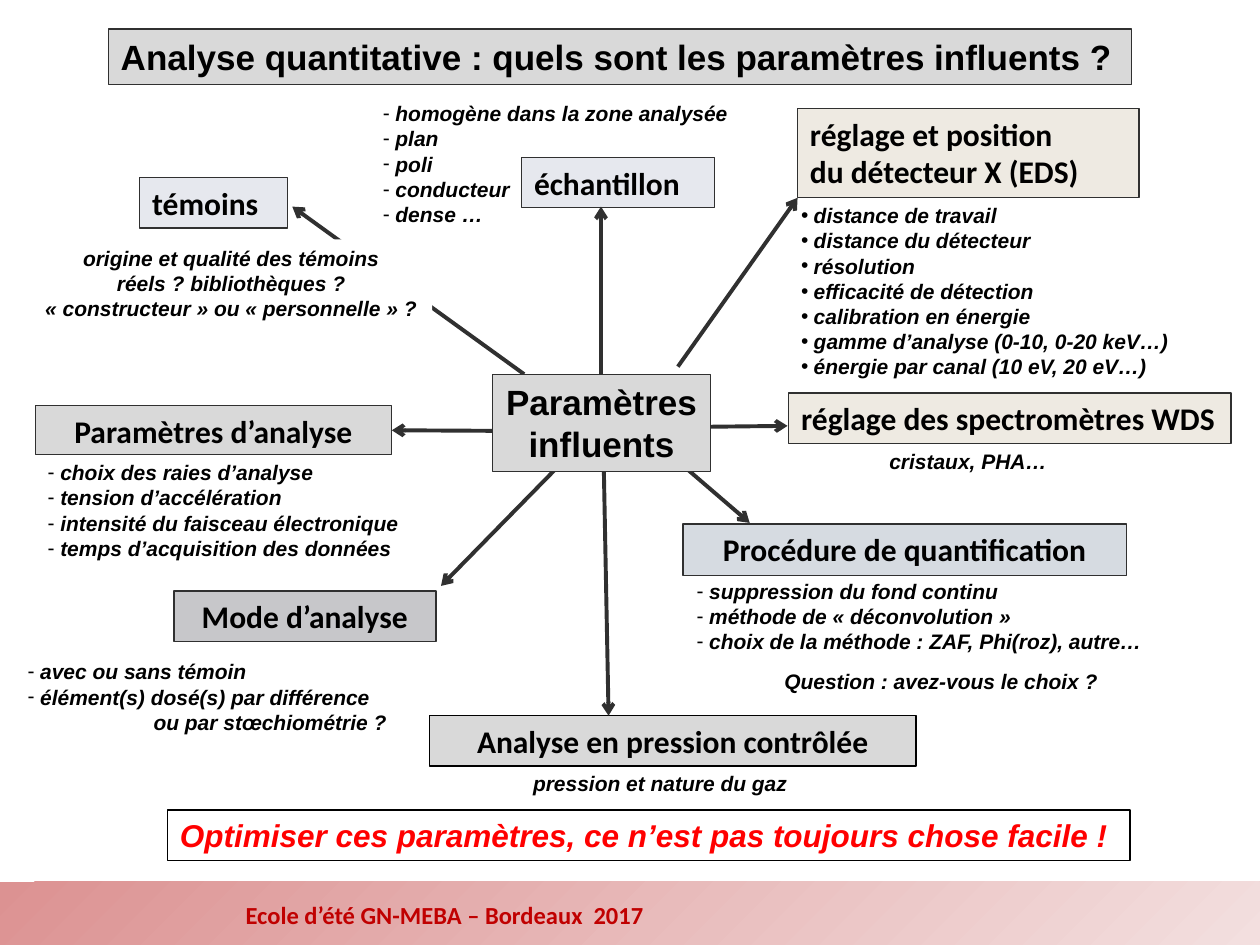
from lxml import etree
from pptx import Presentation, util as u
from pptx.dml.color import RGBColor
from pptx.enum import shapes, text
from pptx.oxml import ns

COLS, ROWS = 100, 75          # grid laid over the slide
INK, BLACK, RED, WHITE = "303030", "000000", "FF0000", "FFFFFF"
GREY, SAND, MIST = "D9D9D9", "EEEAE2", "E6E8EE"
LEFT, CENTER = text.PP_ALIGN.LEFT, text.PP_ALIGN.CENTER


def rgb(code):
    return RGBColor.from_string(code)


def set_bullet(paragraph, mark, gap=0.1):
    props = paragraph._p.get_or_add_pPr()
    props.set("marL", str(u.Inches(gap)))
    props.set("indent", str(-u.Inches(gap)))
    etree.SubElement(props, ns.qn("a:buFont")).set("typeface", "Arial")
    etree.SubElement(props, ns.qn("a:buChar")).set("char", mark)


def write(holder, lines, size=12, font="Arial", color=BLACK, bold=True,
          italic=False, align=LEFT, bullet=None, indented=None):
    """Fill a shape with one paragraph per line; `indented` is a last, unmarked line."""
    frame = holder.text_frame
    frame.word_wrap = False
    frame.auto_size = text.MSO_AUTO_SIZE.SHAPE_TO_FIT_TEXT
    frame.vertical_anchor = text.MSO_ANCHOR.TOP
    all_lines = lines + ([indented] if indented else [])
    for number, line in enumerate(all_lines):
        paragraph = frame.add_paragraph() if number else frame.paragraphs[0]
        paragraph.alignment = align
        if number >= len(lines):
            paragraph._p.get_or_add_pPr().set("marL", str(u.Inches(1)))
        elif bullet:
            set_bullet(paragraph, bullet)
        run = paragraph.add_run()
        run.text = line
        run.font.size, run.font.name = u.Pt(size), font
        run.font.bold, run.font.italic = bold, italic
        run.font.color.rgb = rgb(color)


class Board:
    """The current slide, its grid and its style."""

    def __init__(self, deck):
        self.slide = deck.slides.add_slide(deck.slide_layouts[6])
        self.col = deck.slide_width / COLS
        self.row = deck.slide_height / ROWS

    def place(self, *grid):
        units = (self.col, self.row) * 2
        return [u.Emu(round(n * unit)) for n, unit in zip(grid, units)]

    def band(self, area, start, end):
        band = self.slide.shapes.add_shape(shapes.MSO_SHAPE.RECTANGLE, *self.place(*area))
        band.shadow.inherit = False
        band.line.fill.background()
        band.fill.gradient()
        band.fill.gradient_angle = 315
        for stop, color in zip(band.fill.gradient_stops, (start, end)):
            stop.color.rgb = rgb(color)

    def box(self, area, lines, fill=None, line=INK, size=18, font="Calibri", **style):
        box = self.slide.shapes.add_shape(shapes.MSO_SHAPE.RECTANGLE, *self.place(*area))
        box.shadow.inherit = False
        if fill:
            box.fill.solid()
            box.fill.fore_color.rgb = rgb(fill)
        else:
            box.fill.background()
        box.line.color.rgb = rgb(line)
        box.line.width = u.Pt(0.75)
        write(box, lines, size=size, font=font, **style)
        return box

    def note(self, area, lines, fill=None, italic=True, **style):
        note = self.slide.shapes.add_textbox(*self.place(*area))
        if fill:
            note.fill.solid()
            note.fill.fore_color.rgb = rgb(fill)
        write(note, lines, italic=italic, **style)

    def arrow(self, start, end, target=None, side=3):
        arrow = self.slide.shapes.add_connector(
            shapes.MSO_CONNECTOR.STRAIGHT, *self.place(*start, *end))
        if target is not None:
            arrow.end_connect(target, side)
        arrow.line.color.rgb = rgb(INK)
        arrow.line.width = u.Pt(2.25)
        etree.SubElement(arrow.line._get_or_add_ln(), ns.qn("a:tailEnd")).set("type", "arrow")
        etree.SubElement(arrow._element.spPr, ns.qn("a:effectLst"))


def main():
    deck = Presentation()
    deck.slide_width, deck.slide_height = u.Inches(10), u.Inches(7.5)
    board = Board(deck)

    # Footer and title
    board.band((0, 70, 100, 5), "DC9292", "F3DFDF")
    board.note((18.5, 70.9, 33.8, 3.4), ["Ecole d’été GN-MEBA – Bordeaux  2017"],
               size=14, font="Calibri", color="C00000", italic=False)
    board.box((8.6, 2.3, 81.2, 4.4),
              ["Analyse quantitative : quels sont les paramètres influents ?"],
              GREY, size=20, font="Arial")

    # Detector and spectrometer settings
    board.box((63.3, 8.6, 27.1, 7.1), ["réglage et position", "du détecteur X (EDS)"], SAND)
    board.arrow((53.8, 29.1), (63.3, 15.7))
    board.note((62.6, 15.6, 31.5, 15.1),
               ["distance de travail", "distance du détecteur", "résolution",
                "efficacité de détection", "calibration en énergie",
                "gamme d’analyse (0-10, 0-20 keV…)",
                "énergie par canal (10 eV, 20 eV…)"], bullet="•")
    board.box((62.6, 31.2, 35.1, 4), ["réglage des spectromètres WDS"], SAND)
    board.arrow((53.7, 33.9), (62.5, 33.8))
    board.note((69.6, 35.1, 14.6, 3), ["cristaux, PHA…"])

    # Analysis parameters
    parameters = board.box((2.8, 32.2, 28.3, 3.9), ["Paramètres d’analyse"], GREY, align=CENTER)
    board.note((2.8, 36, 30.2, 9.1),
               ["choix des raies d’analyse", "tension d’accélération",
                "intensité du faisceau électronique",
                "temps d’acquisition des données"], bullet="-")
    board.arrow((39.8, 34.2), (31.1, 34.2), parameters)

    # Analysis mode
    board.box((13.8, 46.9, 20.8, 4), ["Mode d’analyse"], "C7C7CA", align=CENTER)
    board.note((1.2, 51.8, 30.8, 7.1),
               ["avec ou sans témoin", "élément(s) dosé(s) par différence"],
               bullet="-", indented="ou par stœchiométrie ?")
    board.arrow((45.4, 35.9), (35, 46.5))

    # Quantification procedure
    board.box((54.2, 41.6, 35.2, 4.1), ["Procédure de quantification"], "D6DBE1", align=CENTER)
    board.note((54.3, 45.4, 37.8, 7.1),
               ["suppression du fond continu", "méthode de « déconvolution »",
                "choix de la méthode : ZAF, Phi(roz), autre…"], bullet="-")
    board.note((61.1, 52.6, 27.2, 3), ["Question : avez-vous le choix ?"], align=CENTER)
    board.arrow((52.4, 35.4), (59.5, 41.5))

    # Sample
    board.box((41.4, 12.5, 15.3, 4), ["échantillon"], MIST)
    board.note((29.4, 7.5, 29.7, 11.1),
               ["homogène dans la zone analysée", "plan", "poli", "conducteur", "dense …"],
               bullet="-")
    board.arrow((47.7, 30.9), (47.7, 16.4))

    # Standards: the white note covers part of the arrow
    board.arrow((41.6, 29.7), (23.2, 16.4))
    board.box((11.1, 14.1, 11.7, 4), ["témoins"], MIST)
    board.note((2.4, 19, 31.9, 7.1),
               ["origine et qualité des témoins", "réels ? bibliothèques ?",
                "« constructeur » ou « personnelle » ?"], WHITE, align=CENTER)

    # Controlled pressure
    board.box((34.1, 56.8, 38.6, 4), ["Analyse en pression contrôlée"], GREY, BLACK, align=CENTER)
    board.note((41.2, 60.7, 22.4, 3), ["pression et nature du gaz"], align=CENTER)
    board.arrow((47.9, 35.9), (48.3, 56.8))

    # Hub over the arrow starts, and conclusion
    board.box((39.1, 29.7, 17.3, 7.7), ["Paramètres", "influents"], GREY,
              size=20, font="Arial", align=CENTER)
    board.box((13.3, 64.3, 76.4, 4),
              ["Optimiser ces paramètres, ce n’est pas toujours chose facile !"],
              line=BLACK, font="Arial", color=RED, italic=True)

    deck.save("out.pptx")


if __name__ == "__main__":
    main()
